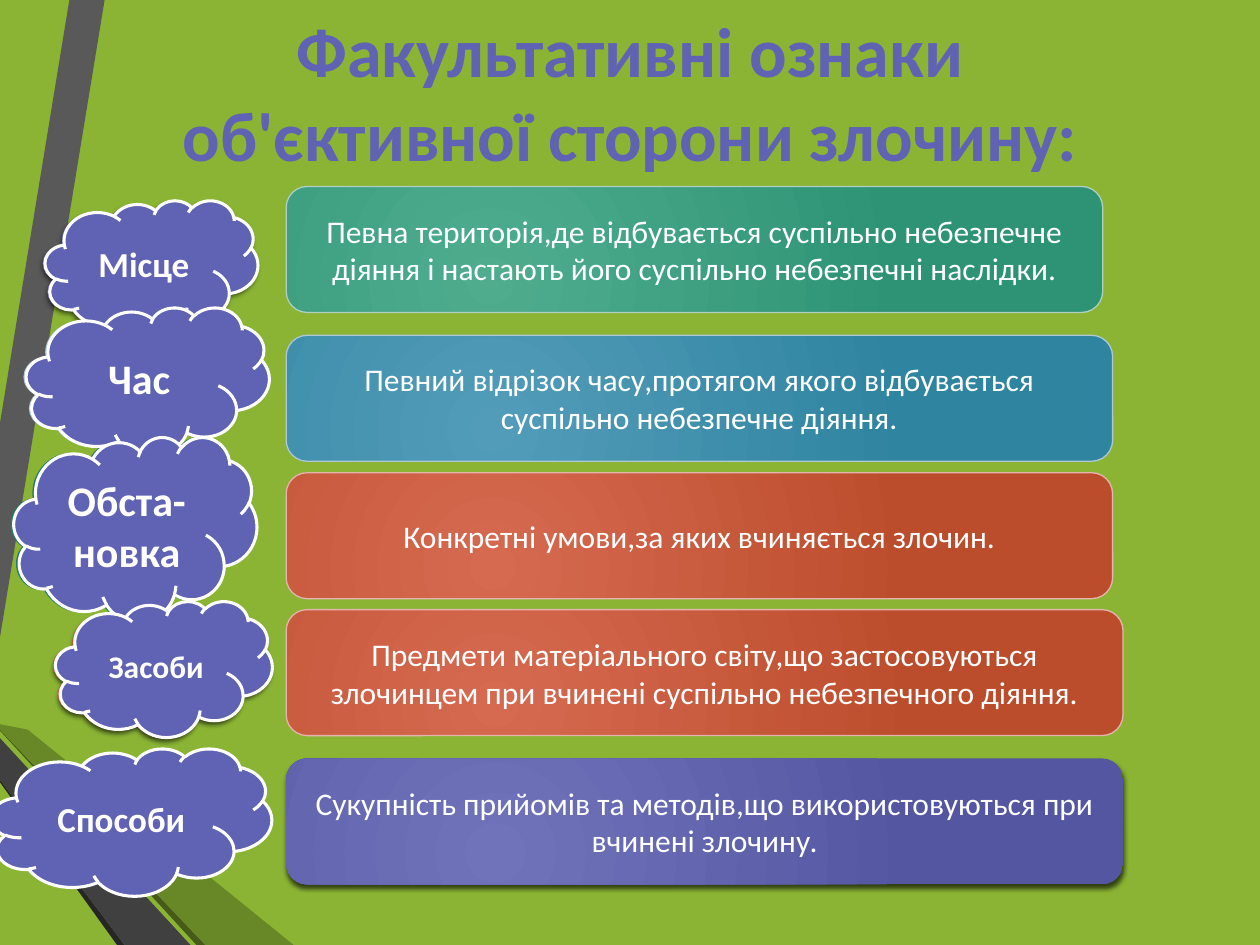
"""Build a slide on the optional signs of the objective side of a crime."""
from pptx import Presentation
from pptx.dml.color import RGBColor
from pptx.enum.shapes import MSO_SHAPE
from pptx.enum.text import MSO_ANCHOR, PP_ALIGN
from pptx.oxml import parse_xml
from pptx.oxml.ns import qn
from pptx.util import Cm, Pt

CLOUD, ROUND = MSO_SHAPE.CLOUD, MSO_SHAPE.ROUNDED_RECTANGLE
MIDDLE, CENTER = MSO_ANCHOR.MIDDLE, PP_ALIGN.CENTER
NS = 'xmlns:a="http://schemas.openxmlformats.org/drawingml/2006/main"'
GLOW = (f'<a:path {NS} path="circle"><a:fillToRect l="50000" t="100000" '
        'r="100000" b="50000"/></a:path>')
SHADE = (f'<a:outerShdw {NS} blurRad="38100" dist="25400" dir="5400000" '
         'rotWithShape="0"><a:srgbClr val="000000"><a:alpha val="64000"/>'
         '</a:srgbClr></a:outerShdw>')
HUES = {
    "back": "8BB434", "stem": "595959", "edge": "262626", "rim": "465A1A",
    "leaf": "688727", "dark": "404040", "violet": "6063B4", "white": "FFFFFF",
    "jade": "33A583", "pine": "267A61",
    "green1": "4FAD8E", "green2": "2D9374", "green3": "AECFC1",
    "blue1": "529CB9", "blue2": "2F84A0", "blue3": "AEC8D6",
    "red1": "D66A51", "red2": "BC4D2C", "red3": "E6B4AE",
    "plum1": "7173BA", "plum2": "5456A2",
}
RGB = {name: RGBColor.from_string(code) for name, code in HUES.items()}


def paint(shape, fills, line=None, width=0.75, shade=False):
    shape.shadow.inherit = False
    if shade:
        shape._element.spPr.find(qn("a:effectLst")).append(parse_xml(SHADE))
    if len(fills) == 1:
        shape.fill.solid()
        shape.fill.fore_color.rgb = RGB[fills[0]]
    else:
        shape.fill.gradient()
        for stop, name in zip(shape.fill.gradient_stops, fills):
            stop.color.rgb = RGB[name]
        lin = shape._element.spPr.find(".//" + qn("a:lin"))
        lin.getparent().replace(lin, parse_xml(GLOW))
    if line:
        shape.line.color.rgb = RGB[line]
        shape.line.width = Pt(width)
    else:
        shape.line.fill.background()


def write(shape, text, size, bold=True, hue="white"):
    frame = shape.text_frame
    frame.word_wrap = True
    frame.vertical_anchor = MIDDLE
    para = frame.paragraphs[0]
    para.text = text
    para.alignment = CENTER
    style = {"name": "Calibri", "size": Pt(size), "bold": bold}
    for key, value in style.items():
        setattr(para.font, key, value)
    para.font.color.rgb = RGB[hue]


deck = Presentation()
deck.slide_width, deck.slide_height = Cm(25.4), Cm(19.05)
slide = deck.slides.add_slide(deck.slide_layouts[6])
slide.background.fill.solid()
slide.background.fill.fore_color.rgb = RGB["back"]
shapes = slide.shapes

bands = [
    ("stem", [(2.11, 0), (1.4, 0), (0, 8.53), (0, 12.85)]),
    ("edge", [(0, 15.72), (0, 15.77), (2.36, 19.05), (2.51, 19.05)]),
    ("rim", [(0, 14.71), (0, 14.73), (3.96, 19.05), (4.14, 19.05)]),
    ("leaf", [(0, 14.71), (4.14, 19.05), (5.92, 19.05), (0.56, 14.71),
              (0, 14.6)]),
    ("dark", [(0, 15.72), (2.51, 19.05), (3.84, 19.05), (0, 14.88)]),
]
for hue, spots in bands:
    spots = [(Cm(x), Cm(y)) for x, y in spots]
    path = shapes.build_freeform(*spots[0])
    path.add_line_segments(spots[1:], close=True)
    paint(path.convert_to_shape(), [hue])

title = shapes.add_textbox(Cm(2.8), Cm(0.1), Cm(19.8), Cm(3.5))
write(title, "Факультативні ознаки об'єктивної сторони злочину:", 40,
      hue="violet")

clouds = [
    ("Місце", 20, (0.91, 4.04, 4.29, 2.69)),
    ("Час", 24, (0.53, 6.2, 4.9, 2.97)),
    ("Обста-новка", 24, (0.28, 8.81, 4.9, 3.73)),
    ("Засоби", 18, (1.12, 12.12, 4.37, 2.74)),
    ("Способи", 20, (-0.18, 15.09, 5.66, 2.97)),
]
backs = [
    (["plum1", "plum2"], None, 0, True),
    (["blue1", "blue2"], "blue3", 0.75, False),
    (["jade"], "pine", 1.25, False),
    (["red1", "red2"], None, 0, True),
]
for (_, _, (x, y, w, h)), look in zip(clouds, backs):
    under = shapes.add_shape(CLOUD, Cm(x - 0.04), Cm(y), Cm(w), Cm(h))
    paint(under, *look)

bars = [
    ("Певна територія,де відбувається суспільно небезпечне діяння "
     "і настають його суспільно небезпечні наслідки.", 3.76, 16.46, "green"),
    ("Певний відрізок часу,протягом якого відбувається суспільно "
     "небезпечне діяння.", 6.76, 16.66, "blue"),
    ("Конкретні умови,за яких вчиняється злочин.", 9.53, 16.66, "red"),
    ("Предмети матеріального світу,що застосовуються злочинцем при "
     "вчинені суспільно небезпечного діяння.", 12.29, 16.87, "red"),
    ("Сукупність прийомів та методів,що використовуються при вчинені "
     "злочину.", 15.29, 16.87, "plum"),
]
for text, top, wide, hue in bars:
    bar = shapes.add_shape(ROUND, Cm(5.77), Cm(top), Cm(wide), Cm(2.54))
    last = hue == "plum"
    paint(bar, [hue + "1", hue + "2"], None if last else hue + "3", shade=last)
    write(bar, text, 18, bold=False)

for text, size, place in clouds:
    cloud = shapes.add_shape(CLOUD, *map(Cm, place))
    paint(cloud, ["violet"], "white", 1.75)
    write(cloud, text, size)

deck.save("out.pptx")
